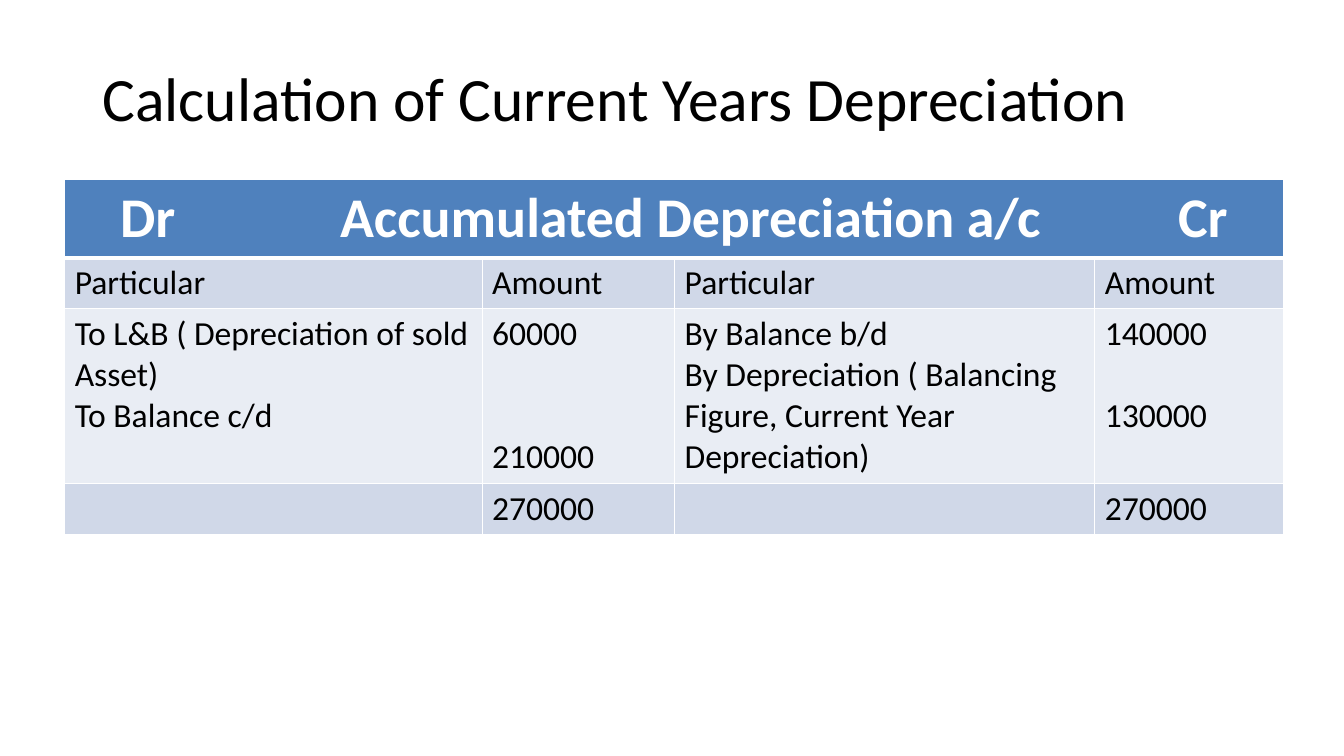
from dataclasses import dataclass

from lxml.etree import SubElement
from pptx import Presentation
from pptx.dml.color import RGBColor
from pptx.enum.text import MSO_ANCHOR, MSO_AUTO_SIZE, PP_ALIGN
from pptx.oxml.ns import qn
from pptx.util import Cm, Pt


@dataclass(frozen=True)
class Theme:
    font: str = "Calibri"
    text: str = "000000"
    white: str = "FFFFFF"
    header: str = "4F81BD"
    dark_band: str = "D0D8E8"
    light_band: str = "E9EDF4"
    title_size: int = 44
    header_size: int = 40
    body_size: int = 24
    body_line: float = 29.3
    thin_rule: int = 1
    thick_rule: int = 3


COLUMN_WIDTHS = (10.52, 4.85, 10.59, 4.75)
ROW_HEIGHTS = (1.97, 1.28, 4.4, 1.28)
HEADER_TEXT = "Dr\tAccumulated Depreciation a/c\tCr"
HEADER_INDENT = 1.4
HEADER_TABS = (5.54, 26.66)
# Each cell is a list of (text, number of free lines above it).
LEDGER = (
    ([("Particular", 0)], [("Amount", 0)], [("Particular", 0)], [("Amount", 0)]),
    (
        [("To L&B ( Depreciation of sold Asset)", 0), ("To Balance c/d", 0)],
        [("60000", 0), ("210000", 2)],
        [("By Balance b/d", 0),
         ("By Depreciation ( Balancing Figure, Current Year Depreciation)", 0)],
        [("140000", 0), ("130000", 1)],
    ),
    ([], [("270000", 0)], [], [("270000", 0)]),
)


class SlideBuilder:
    def __init__(self, slide, theme):
        self.slide = slide
        self.theme = theme

    def format_runs(self, paragraph, size, color, bold=False):
        for run in paragraph.runs:
            run.font.name = self.theme.font
            run.font.size = Pt(size)
            run.font.bold = bold
            run.font.color.rgb = RGBColor.from_string(color)

    def add_title(self, text, left, top, width, height):
        title = self.slide.shapes.title
        title.left, title.top = Cm(left), Cm(top)
        title.width, title.height = Cm(width), Cm(height)
        frame = title.text_frame
        frame.text = text
        frame.word_wrap = True
        frame.auto_size = MSO_AUTO_SIZE.NONE
        frame.vertical_anchor = MSO_ANCHOR.MIDDLE
        frame.margin_right = Cm(0.61)
        paragraph = frame.paragraphs[0]
        paragraph.alignment = PP_ALIGN.CENTER
        self.format_runs(paragraph, self.theme.title_size, self.theme.text)

    def style_cell(self, cell, fill, top_rule, bottom_rule):
        """Draw the four borders, then fill the cell."""
        thin = self.theme.thin_rule
        properties = cell._tc.get_or_add_tcPr()
        rules = {"lnL": thin, "lnR": thin, "lnT": top_rule, "lnB": bottom_rule}
        for side, width in rules.items():
            line = SubElement(properties, qn(f"a:{side}"), w=str(Pt(width)))
            solid = SubElement(line, qn("a:solidFill"))
            SubElement(solid, qn("a:srgbClr"), val=self.theme.white)
        cell.fill.solid()
        cell.fill.fore_color.rgb = RGBColor.from_string(fill)

    def fill_header(self, cell):
        cell.margin_left = Cm(HEADER_INDENT)
        paragraph = cell.text_frame.paragraphs[0]
        paragraph.text = HEADER_TEXT
        tabs = SubElement(paragraph._p.get_or_add_pPr(), qn("a:tabLst"))
        for position in HEADER_TABS:
            SubElement(tabs, qn("a:tab"), pos=str(Cm(position)), algn="l")
        self.format_runs(paragraph, self.theme.header_size, self.theme.white, True)

    def fill_body(self, cell, entries):
        frame = cell.text_frame
        frame.text = "\n".join(text for text, _ in entries)
        for paragraph, (_, free_lines) in zip(frame.paragraphs, entries):
            if free_lines:
                paragraph.space_before = Pt(free_lines * self.theme.body_line)
            self.format_runs(paragraph, self.theme.body_size, self.theme.text)

    def add_ledger(self, left, top):
        theme = self.theme
        table = self.slide.shapes.add_table(
            len(ROW_HEIGHTS), len(COLUMN_WIDTHS), Cm(left), Cm(top),
            Cm(sum(COLUMN_WIDTHS)), Cm(sum(ROW_HEIGHTS))).table
        for column, width in zip(table.columns, COLUMN_WIDTHS):
            column.width = Cm(width)
        for row, height in zip(table.rows, ROW_HEIGHTS):
            row.height = Cm(height)

        table.cell(0, 0).merge(table.cell(0, len(COLUMN_WIDTHS) - 1))
        for cell in table.rows[0].cells:
            self.style_cell(cell, theme.header, theme.thin_rule, theme.thick_rule)
        self.fill_header(table.cell(0, 0))

        for row_index, entries_by_column in enumerate(LEDGER, start=1):
            fill = theme.dark_band if row_index % 2 else theme.light_band
            top_rule = theme.thick_rule if row_index == 1 else theme.thin_rule
            for column_index, entries in enumerate(entries_by_column):
                cell = table.cell(row_index, column_index)
                self.style_cell(cell, fill, top_rule, theme.thin_rule)
                self.fill_body(cell, entries)


def main():
    presentation = Presentation()
    presentation.slide_width = Cm(33.87)
    presentation.slide_height = Cm(19.05)
    title_only = presentation.slide_layouts[5]
    builder = SlideBuilder(presentation.slides.add_slide(title_only), Theme())
    builder.add_title("Calculation of Current Years Depreciation",
                      1.63, 1.12, 28.12, 2.64)
    builder.add_ledger(1.63, 4.52)
    presentation.save("out.pptx")


if __name__ == "__main__":
    main()
